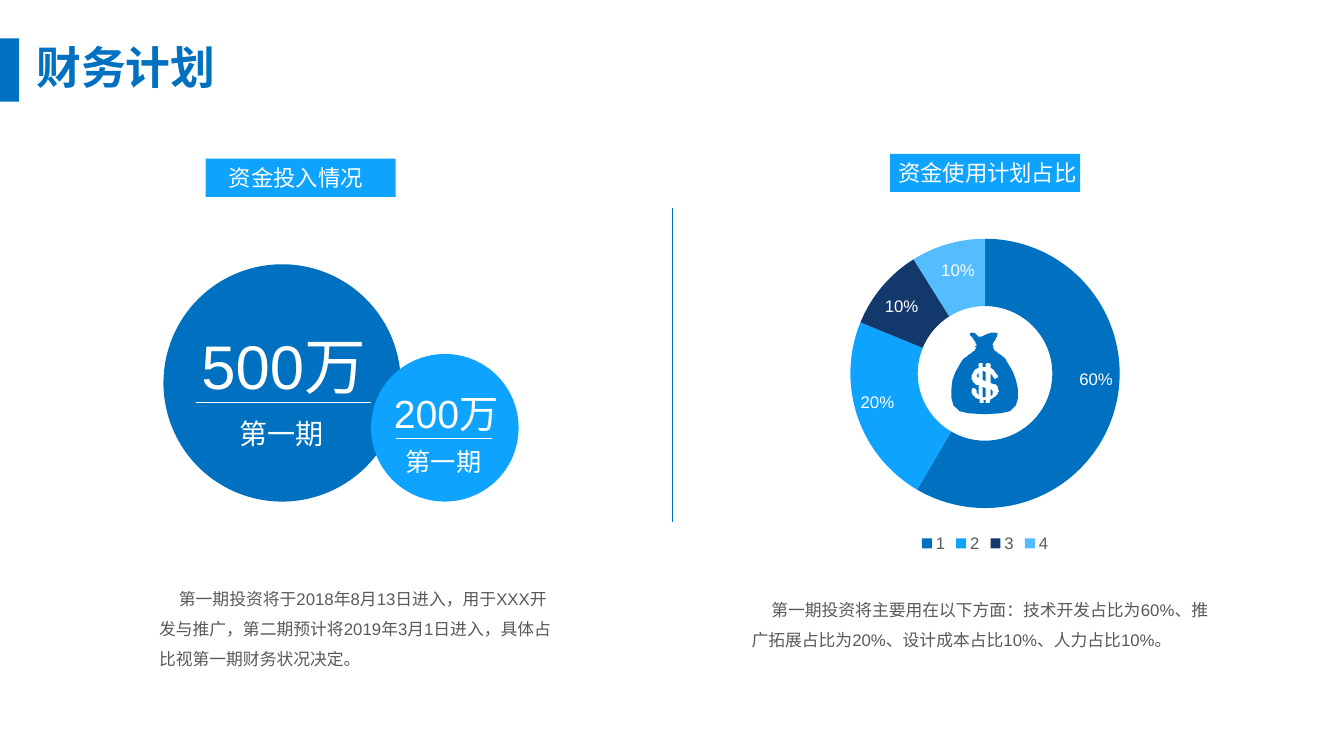
from dataclasses import dataclass

from lxml import etree
from pptx import Presentation
from pptx.chart.data import CategoryChartData
from pptx.dml.color import RGBColor
from pptx.enum.chart import XL_CHART_TYPE as ChartType, XL_LEGEND_POSITION as LegendPos
from pptx.enum.shapes import MSO_CONNECTOR as Connector, MSO_SHAPE as Shape
from pptx.enum.text import MSO_ANCHOR as Anchor, PP_ALIGN as Align
from pptx.oxml import parse_xml
from pptx.oxml.ns import nsdecls, qn
from pptx.util import Cm, Pt

FONT = "Arial"
BLUE, SKY, NAVY, PALE = "0070C0", "0DA3FF", "13396C", "53BDFF"
WHITE, GREY = "FFFFFF", "595959"


@dataclass
class Box:
    """Frame in centimetres."""
    x: float
    y: float
    w: float
    h: float

    def emu(self) -> tuple:
        return Cm(self.x), Cm(self.y), Cm(self.w), Cm(self.h)


@dataclass
class Label:
    text: str
    box: Box
    size: float
    color: str = WHITE
    align: Align = Align.CENTER
    spacing: float = 1.0
    indent: float = 0


@dataclass
class Block:
    kind: Shape
    box: Box
    color: str


@dataclass
class Rule:
    x1: float
    y1: float
    x2: float
    y2: float
    color: str


def rgb(value: str) -> RGBColor:
    return RGBColor.from_string(value)


def style_font(font, size: float, color: str, bold: bool = False) -> None:
    font.name, font.size, font.bold = FONT, Pt(size), bold
    font.color.rgb = rgb(color)


def paint(sp, color: str) -> None:
    sp.shadow.inherit = False
    sp.fill.solid()
    sp.fill.fore_color.rgb = rgb(color)
    sp.line.fill.background()


def add_block(s, block: Block) -> None:
    paint(s.shapes.add_shape(block.kind, *block.box.emu()), block.color)


def add_label(s, label: Label) -> None:
    tf = s.shapes.add_textbox(*label.box.emu()).text_frame
    tf.word_wrap = True
    p = tf.paragraphs[0]
    p.text = label.text
    p.alignment = label.align
    p.line_spacing = label.spacing
    if label.indent:
        p._p.get_or_add_pPr().set("indent", str(Cm(label.indent)))
    style_font(p.runs[0].font, label.size, label.color)


def add_rule(s, rule: Rule) -> None:
    line = s.shapes.add_connector(
        Connector.STRAIGHT, Cm(rule.x1), Cm(rule.y1), Cm(rule.x2), Cm(rule.y2))
    line.line.color.rgb = rgb(rule.color)
    line.line.width = Pt(1)
    etree.SubElement(line._element.spPr, qn("a:effectLst"))


def flatten(contour: list, steps: int = 8) -> list:
    """Turn points (x, y) and cubic curves (three points) into a polygon."""
    points = [contour[0]]
    for seg in contour[1:]:
        if len(seg) == 2:
            points.append(seg)
            continue
        x0, y0 = points[-1]
        for i in range(1, steps + 1):
            t, u = i / steps, 1 - i / steps
            points.append(tuple(
                u**3 * a + 3 * u * u * t * b + 3 * u * t * t * c + t**3 * d
                for a, b, c, d in ((x0, *seg[::2]), (y0, *seg[1::2]))))
    return points


def add_icon(s, contours: list, x: float, y: float, unit: float, color: str) -> None:
    first, *rest = [flatten(c) for c in contours]
    fb = s.shapes.build_freeform(*first[0], scale=Cm(unit))
    fb.add_line_segments(first[1:])
    for points in rest:
        fb.move_to(*points[0])
        fb.add_line_segments(points[1:])
    paint(fb.convert_to_shape(Cm(x), Cm(y)), color)


def add_doughnut(s, box: Box, values: tuple, colors: tuple) -> None:
    data = CategoryChartData()
    data.categories = [str(i + 1) for i in range(len(values))]
    data.add_series("Series 1", values)
    chart = s.shapes.add_chart(ChartType.DOUGHNUT, *box.emu(), data).chart
    style_font(chart.font, 10, "000000")
    chart.has_title = False
    chart.has_legend = True
    chart.legend.position = LegendPos.BOTTOM
    chart.legend.include_in_layout = False
    style_font(chart.legend.font, 11.9, GREY)
    plot = chart.plots[0]
    plot.vary_by_categories = True
    for i, color in enumerate(colors):
        fmt = plot.series[0].points[i].format
        fmt.fill.solid()
        fmt.fill.fore_color.rgb = rgb(color)
        fmt.line.fill.background()
    # Hole size and the place of the ring inside the chart
    area = chart._chartSpace.chart.plotArea
    area.find(".//" + qn("c:holeSize")).set("val", "67")
    for old in area.findall(qn("c:layout")):
        area.remove(old)
    frame = "".join(f'<c:{k} val="{v}"/>' for k, v in (
        ("layoutTarget", "inner"), ("xMode", "edge"), ("yMode", "edge"),
        ("x", 0.23), ("y", 0.04), ("w", 0.54), ("h", 0.82)))
    area.insert(0, parse_xml(
        f'<c:layout {nsdecls("c")}><c:manualLayout>{frame}</c:manualLayout></c:layout>'))


BLOCKS = [
    Block(Shape.RECTANGLE, Box(0, 0.97, 0.48, 1.59), BLUE),
    Block(Shape.RECTANGLE, Box(5.18, 4, 4.79, 0.96), SKY),
    Block(Shape.RECTANGLE, Box(22.43, 3.88, 4.79, 0.96), SKY),
    Block(Shape.OVAL, Box(4.12, 6.66, 5.98, 5.98), BLUE),
    Block(Shape.OVAL, Box(9.35, 8.92, 3.72, 3.72), SKY),
]
RULES = [
    Rule(16.94, 5.23, 16.94, 13.16, BLUE),
    Rule(4.93, 10.14, 9.35, 10.14, WHITE),
    Rule(9.98, 11.05, 12.4, 11.05, WHITE),
]
LABELS = [
    Label("资金投入情况", Box(4.01, 4, 6.89, 0.94), 16),
    Label("资金使用计划占比", Box(21.44, 3.88, 6.89, 0.94), 16),
    Label("第一期", Box(5.18, 10.36, 3.81, 1.11), 20),
    Label("第一期", Box(9.27, 11.13, 3.81, 1.02), 18),
    Label("500万", Box(4.42, 8.13, 5.46, 2.13), 44),
    Label("200万", Box(8.51, 9.68, 5.46, 1.45), 28),
    Label("第一期投资将于2018年8月13日进入，用于XXX开发与推广，第二期预计将2019年3月1日进入，"
          "具体占比视第一期财务状况决定。",
          Box(3.76, 14.45, 10.44, 2.57), 12, GREY, Align.LEFT, 1.5, 0.5),
    Label("第一期投资将主要用在以下方面：技术开发占比为60%、推广拓展占比为20%、"
          "设计成本占比10%、人力占比10%。",
          Box(18.69, 14.73, 12.22, 1.8), 12, GREY, Align.LEFT, 1.5, 0.5),
]
SHARES = [
    Label(text, Box(x, y, 2.08, 0.76), 12, align=Align.LEFT)
    for text, x, y in (("60%", 26.95, 9.17), ("10%", 22.05, 7.32),
                       ("10%", 23.47, 6.43), ("20%", 21.44, 9.75))
]

# Money bag: outline, dollar sign, and the openings of the sign
BAG = [(98, 57), (95, 53, 86, 48, 85, 45), (86, 44), (85, 43),
       (85, 40, 87, 39, 90, 31), (81, 29, 81, 31, 74, 34),
       (69, 35, 69, 28, 62, 31), (66, 38, 69, 40, 69, 43), (67, 44), (69, 45),
       (68, 48, 59, 53, 55, 57), (47, 65, 31, 109, 61, 110), (77, 111), (93, 110),
       (123, 109, 106, 65, 98, 57)]
DOLLAR = [(91, 88), (90, 90, 90, 91, 88, 93), (87, 94, 86, 95, 83, 96), (82, 99),
          (82, 101, 78, 101, 78, 99), (78, 97), (76, 97), (76, 99),
          (76, 101, 72, 101, 72, 99), (72, 96), (70, 96, 69, 95, 68, 95),
          (66, 93, 64, 91, 64, 87), (63, 85, 69, 84, 69, 88), (69, 90, 70, 91, 71, 92),
          (71, 82), (69, 82), (67, 81, 66, 80, 65, 78), (64, 77, 64, 72, 65, 70),
          (66, 69, 67, 67, 68, 66), (71, 65), (71, 61), (72, 60, 75, 60, 75, 61),
          (75, 64), (78, 64), (78, 61), (78, 60, 82, 60, 83, 61), (83, 65),
          (85, 66, 86, 67, 87, 68), (88, 70, 90, 72, 90, 74),
          (90, 76, 85, 77, 85, 73), (83, 71), (83, 80), (86, 81),
          (88, 81, 89, 82, 90, 84), (91, 88)]
OPENINGS = [
    [(75, 84), (75, 94), (78, 94), (78, 85), (75, 84)],
    [(69, 73), (71, 75), (71, 70), (69, 73)],
    [(75, 68), (75, 77), (78, 78), (78, 69), (75, 68)],
    [(83, 86), (83, 93), (85, 92, 86, 88, 83, 86)],
]


def main() -> None:
    prs = Presentation()
    prs.slide_width, prs.slide_height = Cm(33.87), Cm(19.05)
    s = prs.slides.add_slide(prs.slide_layouts[5])

    # Title
    title = s.shapes.title
    title.left, title.top, title.width, title.height = Box(0.05, 0.86, 6.25, 1.63).emu()
    tf = title.text_frame
    tf.text = "财务计划"
    tf.word_wrap = False
    tf.vertical_anchor = Anchor.MIDDLE
    tf.paragraphs[0].alignment = Align.CENTER
    style_font(tf.paragraphs[0].runs[0].font, 32, BLUE, bold=True)

    # Blocks, rules and wording
    for block in BLOCKS:
        add_block(s, block)
    for rule in RULES:
        add_rule(s, rule)
    for label in LABELS:
        add_label(s, label)

    # Spending shares
    add_doughnut(s, Box(18.54, 5.64, 12.57, 8.38), (59, 23, 10, 9),
                 (BLUE, SKY, NAVY, PALE))
    for label in SHARES:
        add_label(s, label)
    add_icon(s, [BAG, DOLLAR, *OPENINGS], 22.86, 7.62, 0.0254, BLUE)

    prs.save("out.pptx")


if __name__ == "__main__":
    main()
